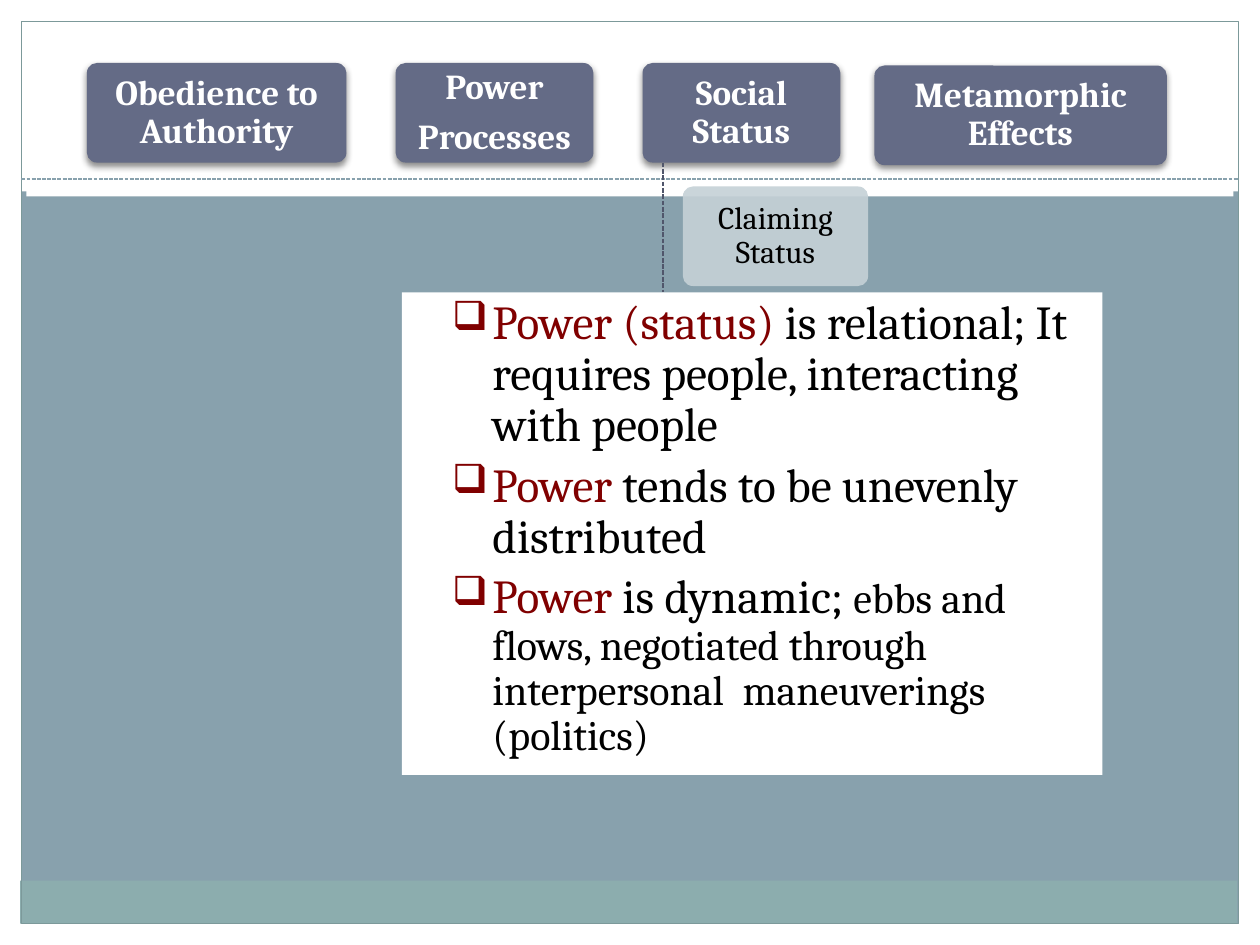
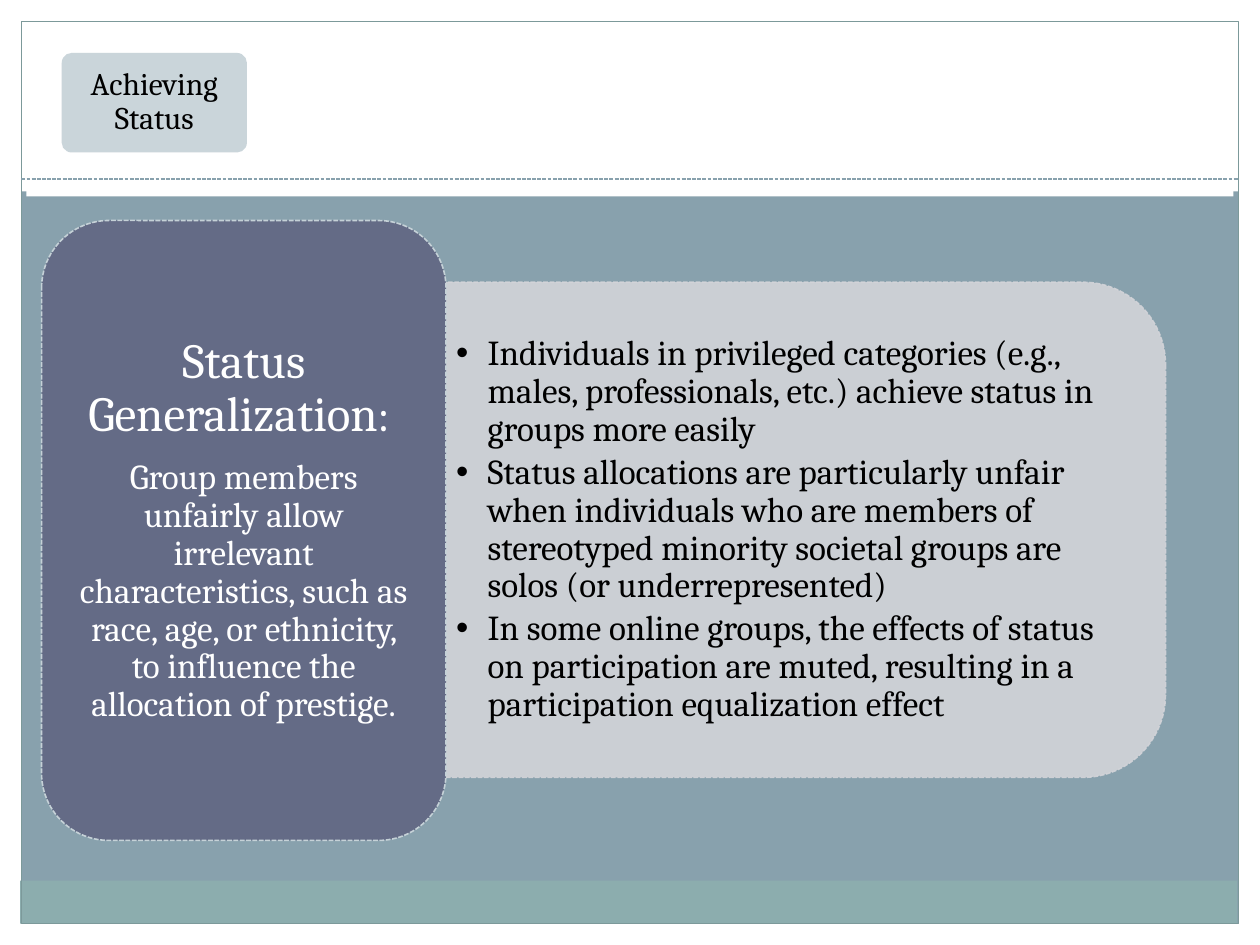
import lxml.etree
import pptx
import pptx.dml.color
import pptx.enum.dml
import pptx.enum.shapes
import pptx.enum.text
import pptx.oxml.ns
import pptx.util

Inches = pptx.util.Inches
Pt = pptx.util.Pt
SHAPE = pptx.enum.shapes.MSO_SHAPE
CENTER = pptx.enum.text.PP_ALIGN.CENTER
MIDDLE = pptx.enum.text.MSO_ANCHOR.MIDDLE

FONT = "Cambria"
WHITE, BLACK, MAROON = "FFFFFF", "000000", "800000"
SLATE, INDIGO, DEEP_INDIGO = "88A1AD", "646B86", "50566B"
MIST, PALE_GRAY = "C5D1D7", "D3D4D9"
FOOTER_GREEN, FRAME_GREEN = "8CADAE", "7C999A"
EDGE = 0.17
TAB_HEIGHT = 0.79


def color(value):
    """Turn a hex string into a colour."""
    return pptx.dml.color.RGBColor.from_string(value)


def add_xml(parent, tag, **attributes):
    """Append a drawing element with the given attributes."""
    return lxml.etree.SubElement(parent, pptx.oxml.ns.qn(tag), attributes)


def style_line(line, value, width, dashed=False):
    """Colour a line and set its width and dash."""
    line.color.rgb = color(value)
    line.width = Pt(width)
    if dashed:
        line.dash_style = pptx.enum.dml.MSO_LINE.SQUARE_DOT


def add_box(page, at, fill=None, kind=SHAPE.RECTANGLE, line=None, width=0.9,
            dashed=False, corner=None, opacity=None):
    """Add a preset shape with flat fill and optional outline."""
    box = page.shapes.add_shape(kind, *map(Inches, at))
    box.shadow.inherit = False
    if fill:
        box.fill.solid()
        box.fill.fore_color.rgb = color(fill)
    else:
        box.fill.background()
    if line:
        style_line(box.line, line, width, dashed)
    else:
        box.line.fill.background()
    if corner is not None:
        box.adjustments[0] = corner
    if opacity:
        for tint in list(box.element.spPr.iter(pptx.oxml.ns.qn("a:srgbClr"))):
            add_xml(tint, "a:alpha", val=str(opacity * 1000))
    return box


def add_shadow(box):
    """Give a shape a soft shadow below it."""
    effects = box.element.spPr.find(pptx.oxml.ns.qn("a:effectLst"))
    shadow = add_xml(effects, "a:outerShdw", blurRad=str(Pt(4)), dist=str(Pt(2)),
                     dir="5400000", rotWithShape="0")
    tint = add_xml(shadow, "a:srgbClr", val=BLACK)
    add_xml(tint, "a:alpha", val="45000")


def add_line(page, start, end, value, width):
    """Add a dashed straight line."""
    connector = page.shapes.add_connector(
        pptx.enum.shapes.MSO_CONNECTOR.STRAIGHT, *map(Inches, start + end))
    style_line(connector.line, value, width, dashed=True)
    add_xml(connector.element.spPr, "a:effectLst")


def prepare_frame(box, insets, anchor=MIDDLE):
    """Set wrapping, margins and anchor of a text frame."""
    frame = box.text_frame
    frame.word_wrap = True
    frame.vertical_anchor = anchor
    frame.margin_left = frame.margin_right = Inches(insets[0])
    frame.margin_top = frame.margin_bottom = Inches(insets[1])


def add_bullet(para, mark, indent, hanging, scale=100, font=None):
    """Give a paragraph a hanging bullet."""
    properties = para._p.get_or_add_pPr()
    properties.set("marL", str(Inches(indent)))
    properties.set("indent", str(-Inches(hanging)))
    add_xml(properties, "a:buSzPct", val=str(scale * 1000))
    if font:
        add_xml(properties, "a:buFont", typeface=font)
    add_xml(properties, "a:buChar", char=mark)


def write_paragraph(box, spans, first=False, align=None, before=0, after=0, bullet=None):
    """Write one paragraph from dictionaries of span text and format."""
    frame = box.text_frame
    para = frame.paragraphs[0] if first else frame.add_paragraph()
    para.alignment = align
    para.line_spacing = 0.9
    para.space_before = Pt(before)
    para.space_after = Pt(after)
    if bullet:
        add_bullet(para, **bullet)
    for span in spans:
        write_span(para, **span)


def write_span(para, text, size=20, tint=BLACK, bold=False):
    """Write one run of formatted text."""
    span = para.add_run()
    span.text = text
    span.font.name = FONT
    span.font.size = Pt(size)
    span.font.bold = bold
    span.font.color.rgb = color(tint)


def add_tab(page, left, top, width, lines, fill=INDIGO, size=20, tint=WHITE,
            bold=True, opacity=None):
    """Add a rounded label with centred text."""
    box = add_box(page, (left, top, width, TAB_HEIGHT), fill, SHAPE.ROUNDED_RECTANGLE,
                  corner=0.1, opacity=opacity)
    prepare_frame(box, (0.04, 0.03))
    for index, text in enumerate(lines):
        write_paragraph(box, [dict(text=text, size=size, tint=tint, bold=bold)],
                        first=index == 0, align=CENTER, after=0.35 * size)
    return box


def add_status_tab(page, left, top, text):
    """Add a pale label that names a kind of status."""
    add_tab(page, left, top, 1.47, [text], MIST, 18, BLACK, False, 90)


def add_page(deck):
    """Add a slide with the shared header, margins, footer and frame."""
    page = deck.slides.add_slide(deck.slide_layouts[6])
    page.background.fill.solid()
    page.background.fill.fore_color.rgb = color(SLATE)
    for at in ((0, 0, 10, 1.52), (0, 7.5 - EDGE, 10, EDGE),
               (10 - EDGE, 0, EDGE, 7.5), (0, 0, EDGE, 7.5)):
        add_box(page, at, WHITE)
    add_box(page, (0.16, 6.99, 9.66, 0.34), FOOTER_GREEN)
    add_box(page, (EDGE, EDGE, 9.66, 7.16), line=FRAME_GREEN, width=0.75)
    add_box(page, (0.21, 1.02, 9.58, 0.54), WHITE)
    add_line(page, (EDGE, 1.42), (10 - EDGE, 1.42), SLATE, 0.75)
    return page


def build_power_page(deck):
    """Build the slide on power and claiming status."""
    page = add_page(deck)
    tabs = (
        (0.69, 0.5, 2.06, ["Obedience to Authority"]),
        (3.14, 0.5, 1.57, ["Power", "Processes"]),
        (5.1, 0.5, 1.57, ["Social Status"]),
        (6.94, 0.52, 2.32, ["Metamorphic Effects"]),
    )
    for tab in tabs:
        add_shadow(add_tab(page, *tab))
    add_status_tab(page, 5.42, 1.48, "Claiming Status")
    add_line(page, (5.26, 1.29), (5.26, 2.32), DEEP_INDIGO, 0.9)

    panel = add_box(page, (3.19, 2.32, 5.56, 3.83), WHITE)
    prepare_frame(panel, (0.1, 0.05), pptx.enum.text.MSO_ANCHOR.TOP)
    points = (
        ("Power (status)", " is relational; It requires people, interacting with people", ""),
        ("Power", " tends to be unevenly distributed", ""),
        ("Power", " is dynamic; ",
         "ebbs and flows, negotiated through interpersonal  maneuverings (politics)"),
    )
    for index, (term, statement, detail) in enumerate(points):
        spans = [dict(text=term, size=27, tint=MAROON), dict(text=statement, size=27)]
        if detail:
            spans.append(dict(text=detail, size=24))
        write_paragraph(panel, spans, first=index == 0, before=5.4,
                        bullet=dict(mark="❑", indent=0.62, hanging=0.32, scale=85))


def build_generalization_page(deck):
    """Build the slide on achieving status."""
    page = add_page(deck)
    panel = add_box(page, (4.43, 1.35, 3.93, 5.71), PALE_GRAY, SHAPE.ROUND_2_SAME_RECTANGLE,
                    line=PALE_GRAY, dashed=True, opacity=90)
    panel.rotation = 90
    findings = page.shapes.add_textbox(*map(Inches, (3.54, 2.43, 5.51, 3.55)))
    prepare_frame(findings, (0.08, 0.04))
    points = (
        "Individuals in privileged categories (e.g., males, professionals, etc.) "
        "achieve status in groups more easily",
        "Status allocations are particularly unfair when individuals who are members "
        "of stereotyped minority societal groups are solos (or underrepresented)",
        "In some online groups, the effects of status on participation are muted, "
        "resulting in a participation equalization effect",
    )
    for index, text in enumerate(points):
        write_paragraph(findings, [dict(text=text)], first=index == 0, after=3,
                        bullet=dict(mark="•", indent=0.25, hanging=0.25, font="Arial"))

    concept = add_box(page, (0.33, 1.75, 3.21, 4.92), INDIGO, SHAPE.ROUNDED_RECTANGLE,
                      line=MIST, dashed=True)
    prepare_frame(concept, (0.12, 0.06))
    write_paragraph(concept, [dict(text="Status Generalization", size=28, tint=WHITE),
                              dict(text=": ", size=26, tint=WHITE)],
                    first=True, align=CENTER, after=9.8)
    definition = ("Group members unfairly allow irrelevant characteristics, such as race, "
                  "age, or ethnicity, to influence the allocation of prestige.")
    write_paragraph(concept, [dict(text=definition, tint=WHITE)], align=CENTER, after=7)
    add_status_tab(page, 0.49, 0.42, "Achieving Status")


def main():
    """Build and save the deck."""
    deck = pptx.Presentation()
    deck.slide_width = Inches(10)
    deck.slide_height = Inches(7.5)
    build_power_page(deck)
    build_generalization_page(deck)
    deck.save("out.pptx")


if __name__ == "__main__":
    main()
